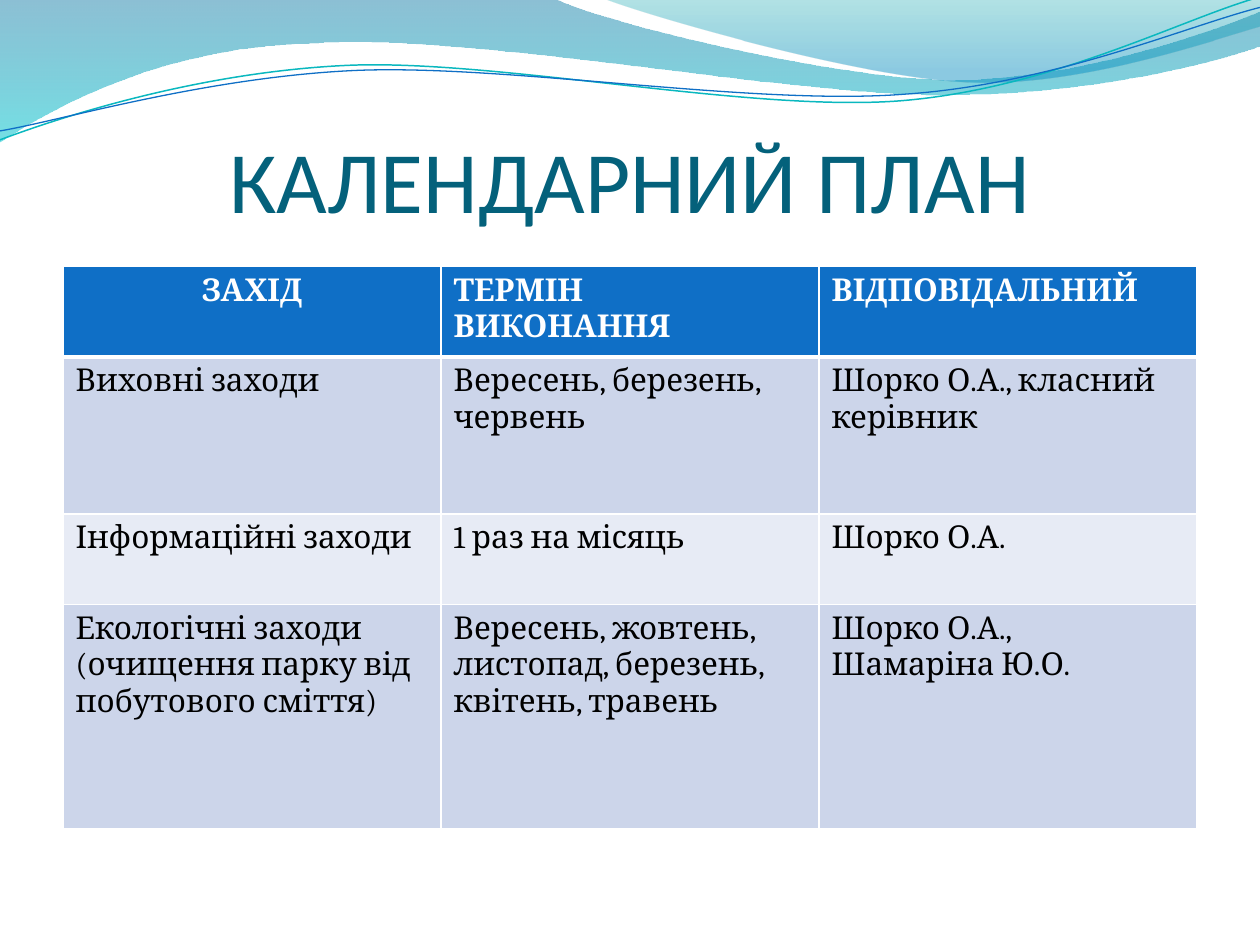
from collections import namedtuple
from dataclasses import dataclass

from lxml import etree
from pptx import Presentation
from pptx.dml.color import RGBColor
from pptx.enum.text import MSO_ANCHOR, PP_ALIGN
from pptx.oxml.ns import qn
from pptx.util import Cm, Pt

LEFT, CENTER = PP_ALIGN.LEFT, PP_ALIGN.CENTER
BOTTOM = MSO_ANCHOR.BOTTOM
BLANK_LAYOUT = 6
LINE_TILT = 357.3

Box = namedtuple("Box", "left top width height")  # centimetres


@dataclass(frozen=True)
class Theme:
    title_font: str = "Calibri"
    body_font: str = "Cambria"
    title_size: int = 50
    body_size: int = 18
    title: str = "04617B"
    header: str = "0F6FC6"
    header_text: str = "FFFFFF"
    body_text: str = "000000"
    bands: tuple = ("CCD5EA", "E7EBF5")
    border: str = "FFFFFF"
    # Gradient stops: position, colour, opacity in percent
    wide_wave: tuple = ((0, "0074A1", 45), (100, "00C6CF", 55))
    right_wave: tuple = ((0, "00A1A9", 30), (80, "008BBF", 45))
    # Line colour and width in points
    upper_line: tuple = ("0AB8BF", 0.85)
    lower_line: tuple = ("0F6FC6", 0.75)


THEME = Theme()

# Wave outlines in centimetres: one point is a straight segment,
# three points are a cubic curve (two controls and the end).
WIDE_WAVE = [
    [(0, 0)],
    [(11.18, -0.03)],
    [(12.09, 0.43), (16.87, 1.6), (19.25, 1.6)],
    [(21.67, 1.6), (24.33, 0.66), (25.4, 0.23)],
    [(25.43, 0.91)],
    [(24.97, 1.12), (22.1, 1.93), (18.95, 1.91)],
    [(15.8, 1.91), (9.7, 0.71), (6.53, 0.86)],
    [(3.28, 0.91), (1.17, 2.11), (-0.03, 2.87)],
]
RIGHT_WAVE = [
    [(12.17, -0.03)],
    [(12.93, 0.28), (17.32, 1.57), (19.53, 1.65)],
    [(21.74, 1.75), (24.41, 0.81), (25.4, 0.53)],
    [(25.4, 0)],
]
# The thin lines are given level and tilted afterwards.
UPPER_LINE = [
    [(-0.05, 2.22)],
    [(1.19, 1.82), (4.02, 1.04), (7.05, 1.05)],
    [(10.05, 1.07), (15.02, 2.37), (18.08, 2.29)],
    [(21.13, 2.2), (23.86, 0.91), (25.41, 0.55)],
]
LOWER_LINE = [
    [(-0.04, 2.04)],
    [(1.16, 1.9), (4.17, 1.15), (7.2, 1.16)],
    [(10.25, 1.18), (15.13, 2.25), (18.19, 2.16)],
    [(21.22, 2.1), (23.93, 1.06), (25.45, 0.75)],
]

PLAN = [
    ["ЗАХІД", "ТЕРМІН ВИКОНАННЯ", "ВІДПОВІДАЛЬНИЙ"],
    ["Виховні заходи", "Вересень, березень, червень", "Шорко О.А., класний керівник"],
    ["Інформаційні заходи", "1 раз на місяць", "Шорко О.А."],
    [
        "Екологічні заходи (очищення парку від побутового сміття)",
        "Вересень, жовтень, листопад, березень, квітень, травень",
        "Шорко О.А.,\nШамаріна Ю.О.",
    ],
]
ROW_HEIGHTS = [1.83, 3.16, 1.83, 4.52]


def write_text(frame, text, *, font, size, color, bold=False, align=LEFT):
    """Write one paragraph for each line of the text."""
    for index, line in enumerate(text.split("\n")):
        para = frame.add_paragraph() if index else frame.paragraphs[0]
        para.alignment = align
        span = para.add_run()
        span.text = line
        span.font.name = font
        span.font.size = Pt(size)
        span.font.bold = bold
        span.font.color.rgb = RGBColor.from_string(color)


def add_outline(page, box, segments, close):
    """Draw straight and cubic segments as one freeform."""
    points = [(Cm(box.left + x), Cm(box.top + y)) for segment in segments for x, y in segment]
    builder = page.shapes.build_freeform(*points[0])
    builder.add_line_segments(points[1:], close=close)
    shape = builder.convert_to_shape()
    shape.shadow.inherit = False

    # Join each run of three points into a cubic curve
    steps = iter(list(shape.element.spPr.iter(qn("a:lnTo"))))
    for segment in segments[1:]:
        first, *others = [next(steps) for _ in segment]
        if others:
            curve = etree.Element(qn("a:cubicBezTo"))
            first.addprevious(curve)
            for step in (first, *others):
                curve.append(step[0])
                step.getparent().remove(step)
    return shape


def add_waves(page, box):
    # Translucent waves
    for segments, stops in ((WIDE_WAVE, THEME.wide_wave), (RIGHT_WAVE, THEME.right_wave)):
        wave = add_outline(page, box, segments, close=True)
        wave.line.fill.background()
        wave.fill.gradient()
        wave.fill.gradient_angle = 270
        for stop, (position, color, _) in zip(wave.fill.gradient_stops, stops):
            stop.position = position / 100
            stop.color.rgb = RGBColor.from_string(color)
        colors = list(wave.element.spPr.iter(qn("a:srgbClr")))
        for node, (_, _, opacity) in zip(colors, stops):
            etree.SubElement(node, qn("a:alpha"), val=str(opacity * 1000))

    # Thin lines
    for segments, (color, width) in ((UPPER_LINE, THEME.upper_line), (LOWER_LINE, THEME.lower_line)):
        curve = add_outline(page, box, segments, close=False)
        curve.rotation = LINE_TILT
        curve.fill.background()
        curve.line.color.rgb = RGBColor.from_string(color)
        curve.line.width = Pt(width)


def add_title(page, box, text):
    frame = page.shapes.add_textbox(*map(Cm, box)).text_frame
    frame.word_wrap = True
    frame.vertical_anchor = BOTTOM
    frame.margin_left = frame.margin_right = frame.margin_bottom = 0
    frame.margin_top = Cm(0.13)
    write_text(frame, text, font=THEME.title_font, size=THEME.title_size,
               color=THEME.title, align=CENTER)


def set_borders(cell, top, bottom):
    properties = cell._tc.get_or_add_tcPr()
    sides = (("a:lnL", 1), ("a:lnR", 1), ("a:lnT", top), ("a:lnB", bottom))
    for index, (side, width) in enumerate(sides):
        line = etree.Element(qn(side), w=str(Pt(width)))
        fill = etree.SubElement(line, qn("a:solidFill"))
        etree.SubElement(fill, qn("a:srgbClr"), val=THEME.border)
        properties.insert(index, line)


def add_plan(page, box, rows):
    table = page.shapes.add_table(len(rows), len(rows[0]), *map(Cm, box)).table
    for column in table.columns:
        column.width = Cm(box.width / len(rows[0]))
    for row, height in zip(table.rows, ROW_HEIGHTS):
        row.height = Cm(height)

    for row_index, texts in enumerate(rows):
        header = row_index == 0
        fill = THEME.header if header else THEME.bands[(row_index - 1) % 2]
        for column_index, text in enumerate(texts):
            cell = table.cell(row_index, column_index)
            cell.fill.solid()
            cell.fill.fore_color.rgb = RGBColor.from_string(fill)
            set_borders(cell, top=3 if row_index == 1 else 1, bottom=3 if header else 1)
            write_text(cell.text_frame, text, font=THEME.body_font, size=THEME.body_size,
                       color=THEME.header_text if header else THEME.body_text, bold=header,
                       align=CENTER if header and column_index == 0 else LEFT)


def main():
    deck = Presentation()
    deck.slide_width, deck.slide_height = Cm(25.4), Cm(19.05)
    page = deck.slides.add_slide(deck.slide_layouts[BLANK_LAYOUT])
    add_waves(page, Box(0, 0, 25.4, 2.87))
    add_title(page, Box(1.27, 1.96, 22.86, 2.69), "КАЛЕНДАРНИЙ ПЛАН")
    add_plan(page, Box(1.27, 5.37, 22.86, sum(ROW_HEIGHTS)), PLAN)
    deck.save("out.pptx")


if __name__ == "__main__":
    main()
